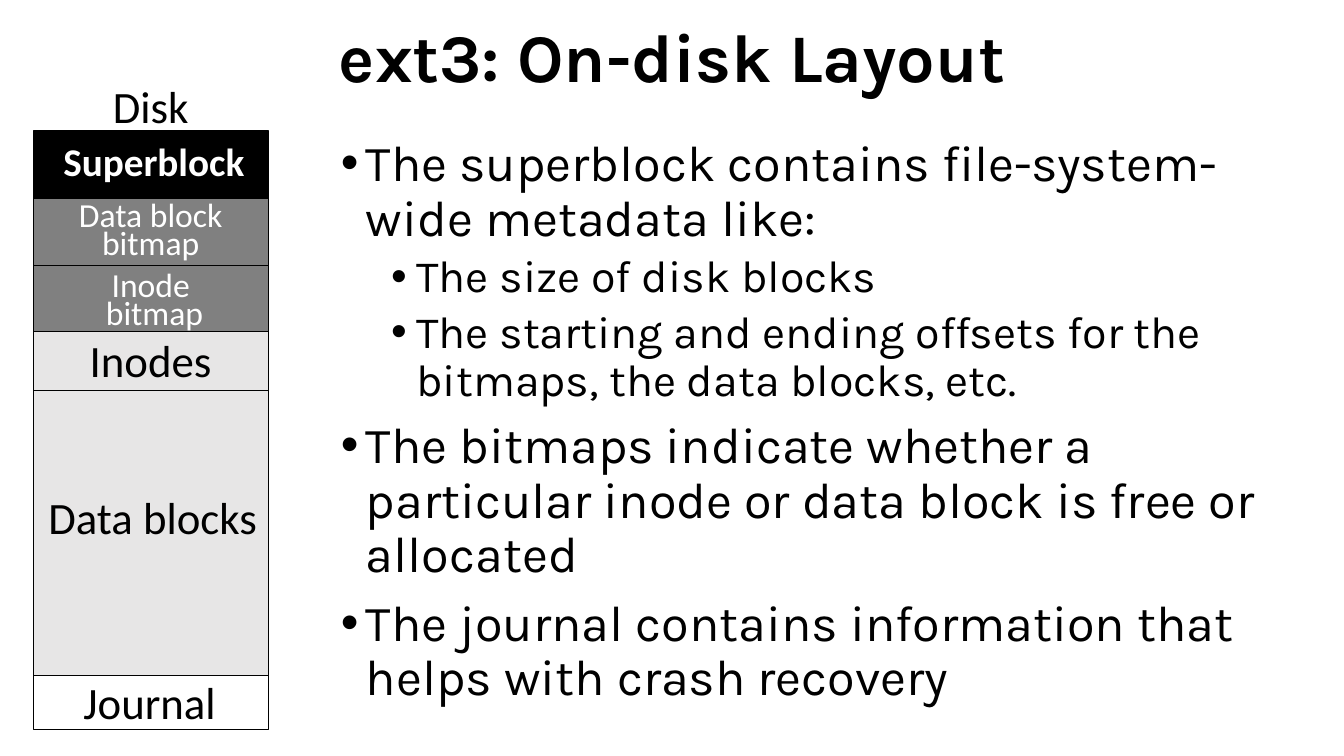
from dataclasses import dataclass

from lxml import etree
from pptx import Presentation
from pptx.dml.color import RGBColor
from pptx.enum import shapes as s, text as t
from pptx.oxml import ns
from pptx.util import Inches, Pt

BLACK = RGBColor(0x00, 0x00, 0x00)
WHITE = RGBColor(0xFF, 0xFF, 0xFF)
GRAY = RGBColor(0x80, 0x80, 0x80)
PALE = RGBColor(0xE7, 0xE6, 0xE6)

LEFT, TOP, WIDTH = 0.33, 1.3, 2.33


@dataclass
class Label:
    lines: list[str]
    left: float
    top: float
    width: float
    height: float = 0.64
    size: int = 32
    color: RGBColor = BLACK
    bold: bool = False
    pitch: int | None = None


@dataclass
class Band:
    height: float
    fill: RGBColor
    label: Label


@dataclass
class Item:
    words: str
    level: int = 0


DISK = Label(["Disk"], 0.62, 0.73, 1.75)
BANDS = [
    Band(0.67, BLACK, Label(["Superblock"], LEFT, 1.31, 2.39, 0.57, 28, WHITE, True)),
    Band(0.66, GRAY, Label(["Data block bitmap"], LEFT, 2, WIDTH, 0.68, 24, WHITE, pitch=20)),
    Band(0.66, GRAY, Label(["Inode", " bitmap"], LEFT, 2.69, WIDTH, 0.68, 24, WHITE, pitch=20)),
    Band(0.58, PALE, Label(["Inodes"], LEFT, 3.25, WIDTH)),
    Band(2.83, PALE, Label(["Data blocks"], 0.35, 4.81, WIDTH)),
    Band(0.54, WHITE, Label(["Journal"], 0.32, 6.64, WIDTH)),
]
ITEMS = [
    Item("The superblock contains file-system-wide metadata like:"),
    Item("The size of disk blocks", 1),
    Item("The starting and ending offsets for the bitmaps, the data blocks, etc.", 1),
    Item("The bitmaps indicate whether a particular inode or data block is free or allocated"),
    Item("The journal contains information that helps with crash recovery"),
]


def place(shape, left: float, top: float, width: float, height: float) -> None:
    shape.left, shape.top = Inches(left), Inches(top)
    shape.width, shape.height = Inches(width), Inches(height)


def write(para, words: str, face: str, size: float, color: RGBColor, bold: bool = False) -> None:
    run = para.add_run()
    run.text = words
    run.font.name = face
    run.font.size = Pt(size)
    run.font.color.rgb = color
    run.font.bold = bold


def lines(frame, count: int) -> list:
    while len(frame.paragraphs) < count:
        frame.add_paragraph()
    return list(frame.paragraphs)


def draw_label(group, label: Label) -> None:
    box = group.shapes.add_textbox(
        Inches(label.left), Inches(label.top), Inches(label.width), Inches(label.height))
    frame = box.text_frame
    frame.word_wrap = True
    frame.auto_size = t.MSO_AUTO_SIZE.SHAPE_TO_FIT_TEXT
    for para, words in zip(lines(frame, len(label.lines)), label.lines):
        para.alignment = t.PP_ALIGN.CENTER
        if label.pitch:
            para.line_spacing = Pt(label.pitch)
        write(para, words, "Calibri", label.size, label.color, label.bold)


def draw_band(group, band: Band, top: float) -> None:
    rect = group.shapes.add_shape(
        s.MSO_SHAPE.RECTANGLE, Inches(LEFT), Inches(top), Inches(WIDTH), Inches(band.height))
    rect.shadow.inherit = False
    rect.fill.solid()
    rect.fill.fore_color.rgb = band.fill
    rect.line.color.rgb = BLACK
    rect.line.width = Pt(0.75)
    draw_label(group, band.label)


def draw_disk(slide) -> None:
    group = slide.shapes.add_group_shape()
    draw_label(group, DISK)
    top = TOP
    for band in BANDS:
        draw_band(group, band, top)
        top += band.height


def fill_title(title) -> None:
    place(title, 0, 0.15, 13.33, 0.9)
    frame = title.text_frame
    frame.auto_size = t.MSO_AUTO_SIZE.NONE
    frame.vertical_anchor = t.MSO_ANCHOR.MIDDLE
    para = frame.paragraphs[0]
    para.alignment = t.PP_ALIGN.CENTER
    para.line_spacing = 0.9
    write(para, "ext3: On-disk Layout", "Karla", 48.6, BLACK, True)


def add_bullet(para, level: int) -> None:
    props = para._p.get_or_add_pPr()
    props.set("marL", str(Inches(0.25 + 0.5 * level)))
    props.set("indent", str(Inches(-0.25)))
    etree.SubElement(props, ns.qn("a:buFont")).set("typeface", "Arial")
    etree.SubElement(props, ns.qn("a:buChar")).set("char", "•")


def fill_body(body) -> None:
    place(body, 3.28, 1.32, 9.87, 6.18)
    frame = body.text_frame
    frame.auto_size = t.MSO_AUTO_SIZE.NONE
    frame.vertical_anchor = t.MSO_ANCHOR.TOP
    for para, item in zip(lines(frame, len(ITEMS)), ITEMS):
        para.level = item.level
        para.line_spacing = 0.9
        para.space_before = Pt(5 if item.level else 10)
        add_bullet(para, item.level)
        write(para, item.words, "Karla", 32 if item.level else 36, BLACK)


def main() -> None:
    deck = Presentation()
    deck.slide_width, deck.slide_height = Inches(13.33), Inches(7.5)
    slide = deck.slides.add_slide(deck.slide_layouts[1])
    fill_title(slide.shapes.title)
    fill_body(slide.placeholders[1])
    draw_disk(slide)
    deck.save("out.pptx")


if __name__ == "__main__":
    main()
